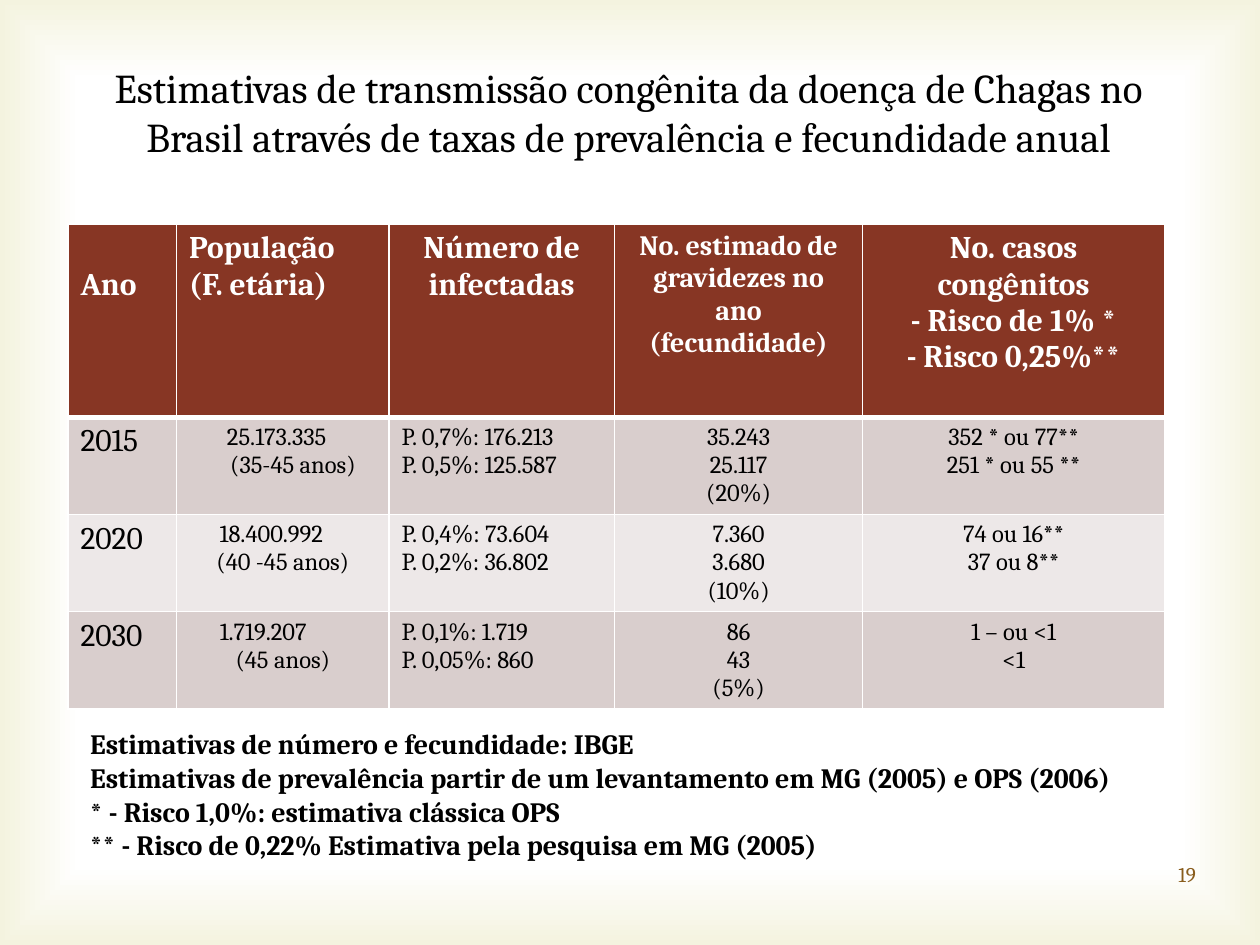
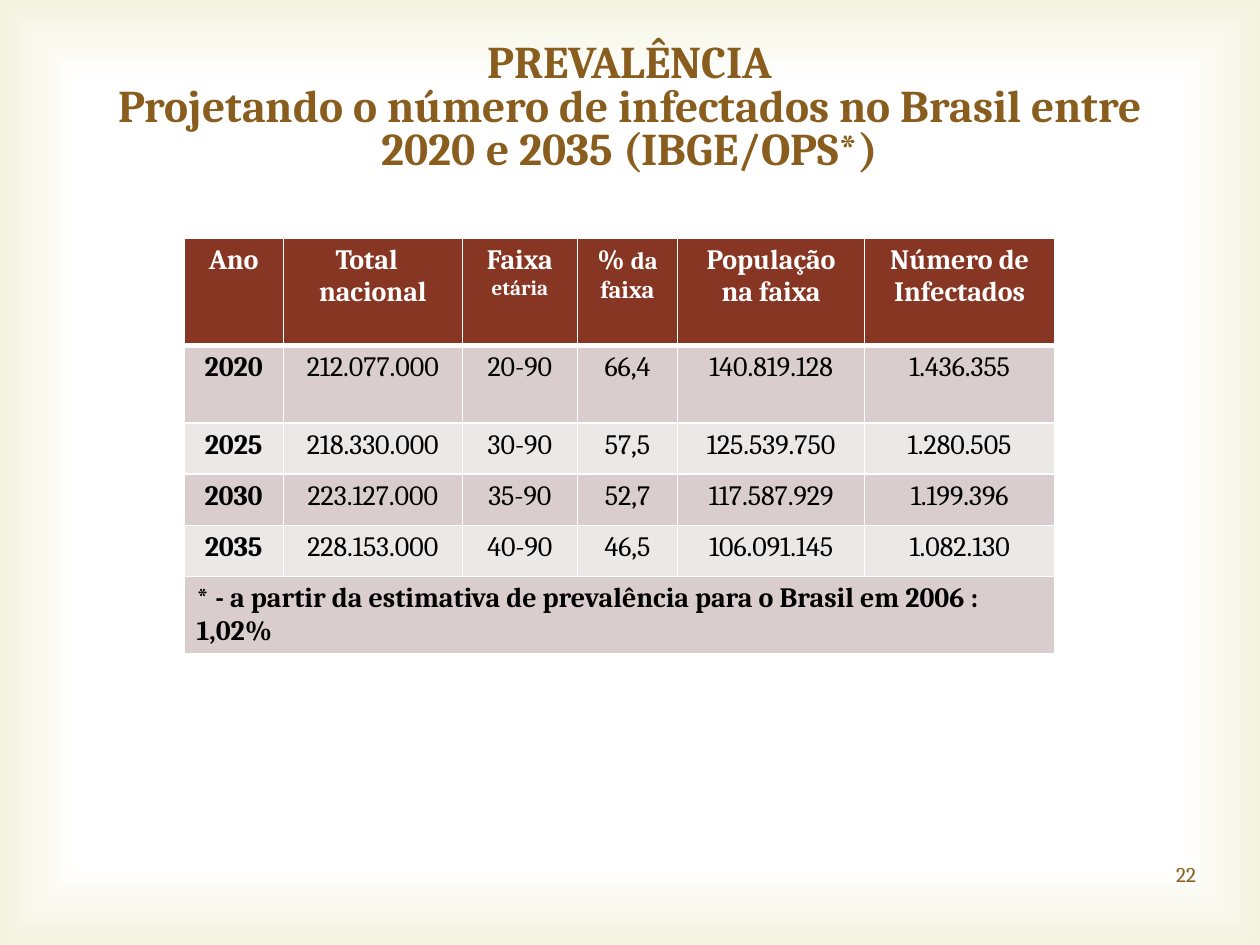
import lxml.etree
import pptx
import pptx.dml.color
import pptx.enum.text
import pptx.oxml.ns
import pptx.util

Cm, Pt = pptx.util.Cm, pptx.util.Pt
qn = pptx.oxml.ns.qn
ALIGN = {
    "l": pptx.enum.text.PP_ALIGN.LEFT,
    "c": pptx.enum.text.PP_ALIGN.CENTER,
    "r": pptx.enum.text.PP_ALIGN.RIGHT,
}
FONT = "Cambria"
BLACK, WHITE, BROWN, CREAM = "000000", "FFFFFF", "895D1D", "F4F3DF"
HEADER, BANDS = "873624", ("D9CECD", "EDE8E8")
NUMBER_BOX = (18.44, 17.12, 5.92, 1.02)
SMALL_RUNS = {"etária": 12, "da faixa": 14}
MARGIN = 0.25

SLIDES = [
    {
        "title": "Estimativas de transmissão congênita da doença de Chagas no Brasil "
                 "através de taxas de prevalência e fecundidade anual",
        "title_box": (1.24, 1.14, 22.86, 3.18),
        "title_format": {"size": 23.4, "color": BLACK},
        "title_spacing": 1.0,
        "table_at": (1.37, 4.52),
        "cols": (2.19, 4.28, 4.55, 5.0, 6.09),
        "heights": (3.89, 1.96, 1.96, 1.96),
        "header_sizes": (18, 18, 18, 16, 18),
        "header_align": "llccc",
        "body_sizes": (18, 14, 14, 14, 14),
        "body_align": "lclcc",
        "bold_years": False,
        "rows": [
            ("Ano", "População\n(F. etária)", "Número de infectadas",
             "No. estimado de\ngravidezes no ano\n(fecundidade)",
             "No. casos congênitos\n- Risco de 1% *\n- Risco 0,25%**"),
            ("2015", "25.173.335\n(35-45 anos)", "P. 0,7%: 176.213\nP. 0,5%: 125.587",
             "35.243\n25.117\n(20%)", "352 * ou 77**\n251 * ou 55 **"),
            ("2020", "18.400.992\n(40 -45 anos)", "P. 0,4%: 73.604\nP. 0,2%: 36.802",
             "7.360\n3.680\n(10%)", "74 ou 16**\n37 ou 8**"),
            ("2030", "1.719.207\n(45 anos)", "P. 0,1%: 1.719\nP. 0,05%: 860",
             "86\n43\n(5%)", "1 – ou <1\n<1"),
        ],
        "top_gaps": {(0, 0): 0.73},
        "nudges": {(1, 1): (0.25, 0.66), (2, 1): (0.46, 0.46), (3, 1): (0.79, 0.79)},
        "notes": "Estimativas de número e fecundidade: IBGE\n"
                 "Estimativas de prevalência partir de um levantamento em MG (2005) e OPS (2006)\n"
                 "* - Risco 1,0%: estimativa clássica OPS\n"
                 "** - Risco de 0,22% Estimativa pela pesquisa em MG (2005)",
        "notes_box": (1.57, 14.53, 21.72, 3.0),
        "number": "19",
    },
    {
        "title": "PREVALÊNCIA\nProjetando o número de infectados no Brasil entre "
                 "2020 e 2035 (IBGE/OPS*)",
        "title_box": (1.27, 0.76, 22.86, 3.18),
        "title_format": {"size": 25.9, "color": BROWN, "bold": True},
        "title_spacing": 0.8,
        "table_at": (3.71, 4.8),
        "cols": (2.0, 3.61, 2.32, 2.02, 3.77, 3.83),
        "heights": (2.16, 1.57, 1.03, 1.03, 1.03, 1.54),
        "header_sizes": (16,) * 6,
        "header_align": "cccccc",
        "body_sizes": (16,) * 6,
        "body_align": "cccccc",
        "bold_years": True,
        "rows": [
            ("Ano", "Total\nnacional", "Faixa\netária", "% |da faixa",
             "População\nna faixa", "Número de\nInfectados"),
            ("2020", "212.077.000", "20-90", "66,4", "140.819.128", "1.436.355"),
            ("2025", "218.330.000", "30-90", "57,5", "125.539.750", "1.280.505"),
            ("2030", "223.127.000", "35-90", "52,7", "117.587.929", "1.199.396"),
            ("2035", "228.153.000", "40-90", "46,5", "106.091.145", "1.082.130"),
            ("* - a partir da estimativa de prevalência para o Brasil em 2006 : 1,02%",),
        ],
        "top_gaps": {},
        "nudges": {(0, 1): (0.25, 0.25)},
        "notes": None,
        "number": "22",
    },
]


def rgb(value):
    """Turn a hex string into a colour."""
    return pptx.dml.color.RGBColor.from_string(value)


def write(tf, text, size, color, bold=False, align="l", spacing=None):
    """Write lines as paragraphs, with runs parted by a bar."""
    tf.word_wrap = True
    for i, line in enumerate(text.split("\n")):
        p = tf.add_paragraph() if i else tf.paragraphs[0]
        p.alignment = ALIGN[align]
        if spacing:
            p.line_spacing = spacing
        for part in line.split("|"):
            r = p.add_run()
            r.text = part
            values = {"name": FONT, "size": Pt(SMALL_RUNS.get(part, size)), "bold": bold}
            for name, value in values.items():
                setattr(r.font, name, value)
            r.font.color.rgb = rgb(color)


def set_borders(cell, row):
    """Draw white cell borders, thick beneath the header."""
    tcPr = cell._tc.get_or_add_tcPr()
    thick = {0: "lnB", 1: "lnT"}.get(row)
    for i, side in enumerate(("lnL", "lnR", "lnT", "lnB")):
        ln = lxml.etree.Element(qn("a:" + side), w=str(Pt(3 if side == thick else 1)))
        fill = lxml.etree.SubElement(ln, qn("a:solidFill"))
        lxml.etree.SubElement(fill, qn("a:srgbClr"), val=WHITE)
        tcPr.insert(i, ln)


def cell_format(data, row, col):
    """Choose the text format of a cell from its place."""
    if row == 0:
        return {"size": data["header_sizes"][col], "color": WHITE, "bold": True,
                "align": data["header_align"][col]}
    if len(data["rows"][row]) == 1:
        return {"size": data["body_sizes"][col], "color": BLACK, "bold": True}
    return {"size": data["body_sizes"][col], "color": BLACK,
            "bold": data["bold_years"] and col == 0, "align": data["body_align"][col]}


def add_data_table(s, data):
    """Add the table of estimates."""
    cols, heights = data["cols"], data["heights"]
    box = (*data["table_at"], sum(cols), sum(heights))
    table = s.shapes.add_table(len(heights), len(cols), *map(Cm, box)).table
    for column, width in zip(table.columns, cols):
        column.width = Cm(width)
    for i, texts in enumerate(data["rows"]):
        table.rows[i].height = Cm(heights[i])
        if len(texts) == 1:
            table.cell(i, 0).merge(table.cell(i, len(cols) - 1))
        for j in range(len(cols)):
            cell = table.cell(i, j)
            cell.fill.solid()
            cell.fill.fore_color.rgb = rgb(BANDS[(i - 1) % 2] if i else HEADER)
            set_borders(cell, i)
            if j < len(texts):
                write(cell.text_frame, texts[j], **cell_format(data, i, j))
    for at, gap in data["top_gaps"].items():
        table.cell(*at).margin_top = Cm(0.13 + gap)
    for at, (right, indent) in data["nudges"].items():
        cell = table.cell(*at)
        cell.margin_right = Cm(MARGIN + right)
        pPr = cell.text_frame.paragraphs[1]._p.get_or_add_pPr()
        pPr.set("marL", str(Cm(indent)))


def add_text(s, box, text, anchor="TOP", **values):
    """Add a text box."""
    tf = s.shapes.add_textbox(*map(Cm, box)).text_frame
    tf.vertical_anchor = getattr(pptx.enum.text.MSO_ANCHOR, anchor)
    write(tf, text, **values)


def add_title(s, data):
    """Place and write the title."""
    sp = s.shapes.title
    for name, value in zip(("left", "top", "width", "height"), data["title_box"]):
        setattr(sp, name, Cm(value))
    tf = sp.text_frame
    tf.auto_size = pptx.enum.text.MSO_AUTO_SIZE.NONE
    tf.vertical_anchor = pptx.enum.text.MSO_ANCHOR.TOP
    write(tf, data["title"], align="c", spacing=data["title_spacing"], **data["title_format"])


def set_background(master):
    """Give the master white pages with a cream glow at the edges."""
    fill = master.background.fill
    fill.gradient()
    for stop, position, color in zip(fill.gradient_stops, (0.83, 1.0), (WHITE, CREAM)):
        stop.position = position
        stop.color.rgb = rgb(color)
    grad = next(master.element.iter(qn("a:gradFill")))
    grad.remove(grad.find(qn("a:lin")))
    shade = lxml.etree.SubElement(grad, qn("a:path"), path="rect")
    lxml.etree.SubElement(shade, qn("a:fillToRect"), dict.fromkeys("ltrb", "50000"))


def main():
    """Build the slides and save them."""
    prs = pptx.Presentation()
    prs.slide_width, prs.slide_height = Cm(25.4), Cm(19.05)
    set_background(prs.slide_master)
    for data in SLIDES:
        s = prs.slides.add_slide(prs.slide_layouts[5])
        add_title(s, data)
        add_data_table(s, data)
        if data["notes"]:
            add_text(s, data["notes_box"], data["notes"], size=16, color=BLACK, bold=True)
        add_text(s, NUMBER_BOX, data["number"], "MIDDLE", size=12, color=BROWN, align="r")
    prs.save("out.pptx")


if __name__ == "__main__":
    main()
